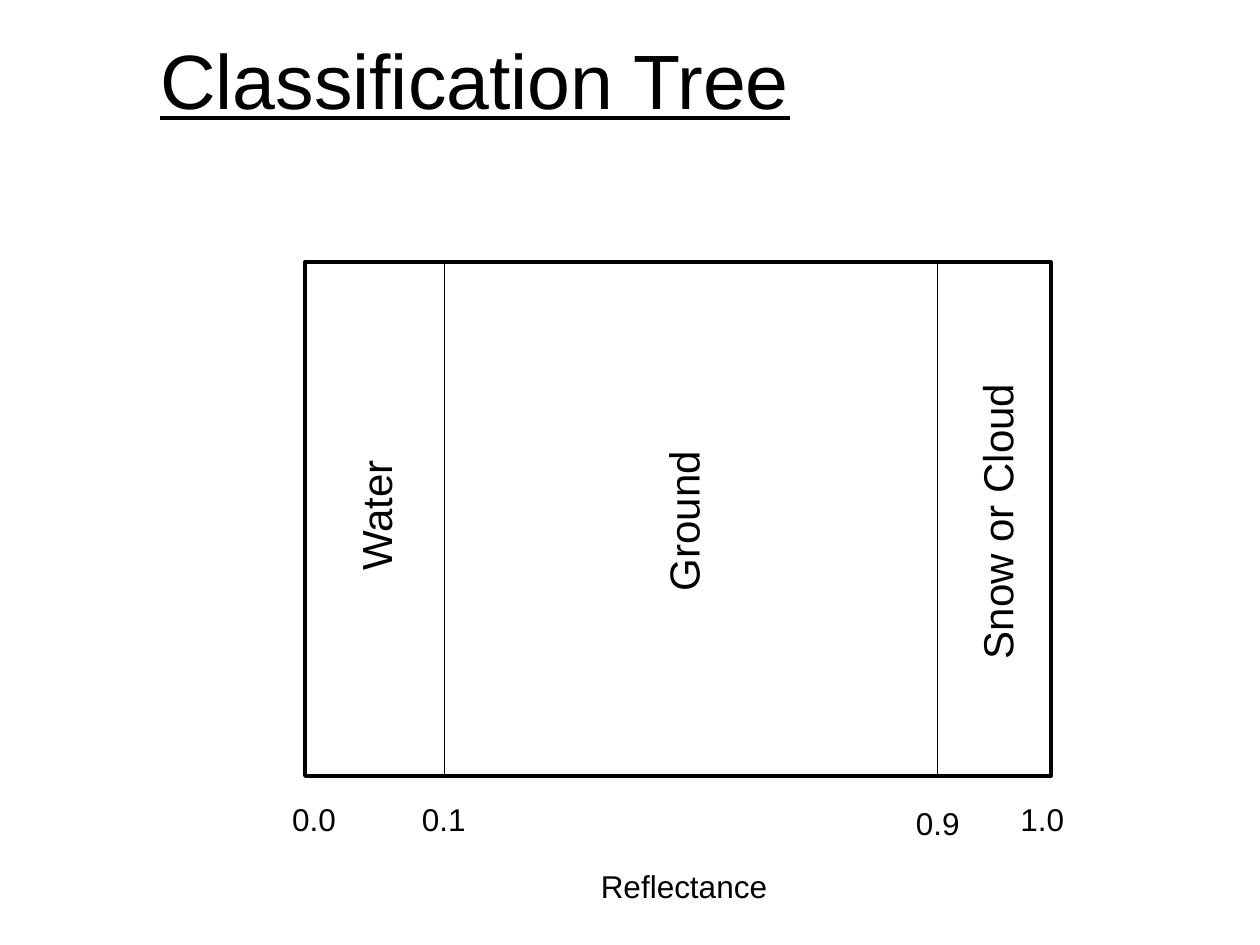
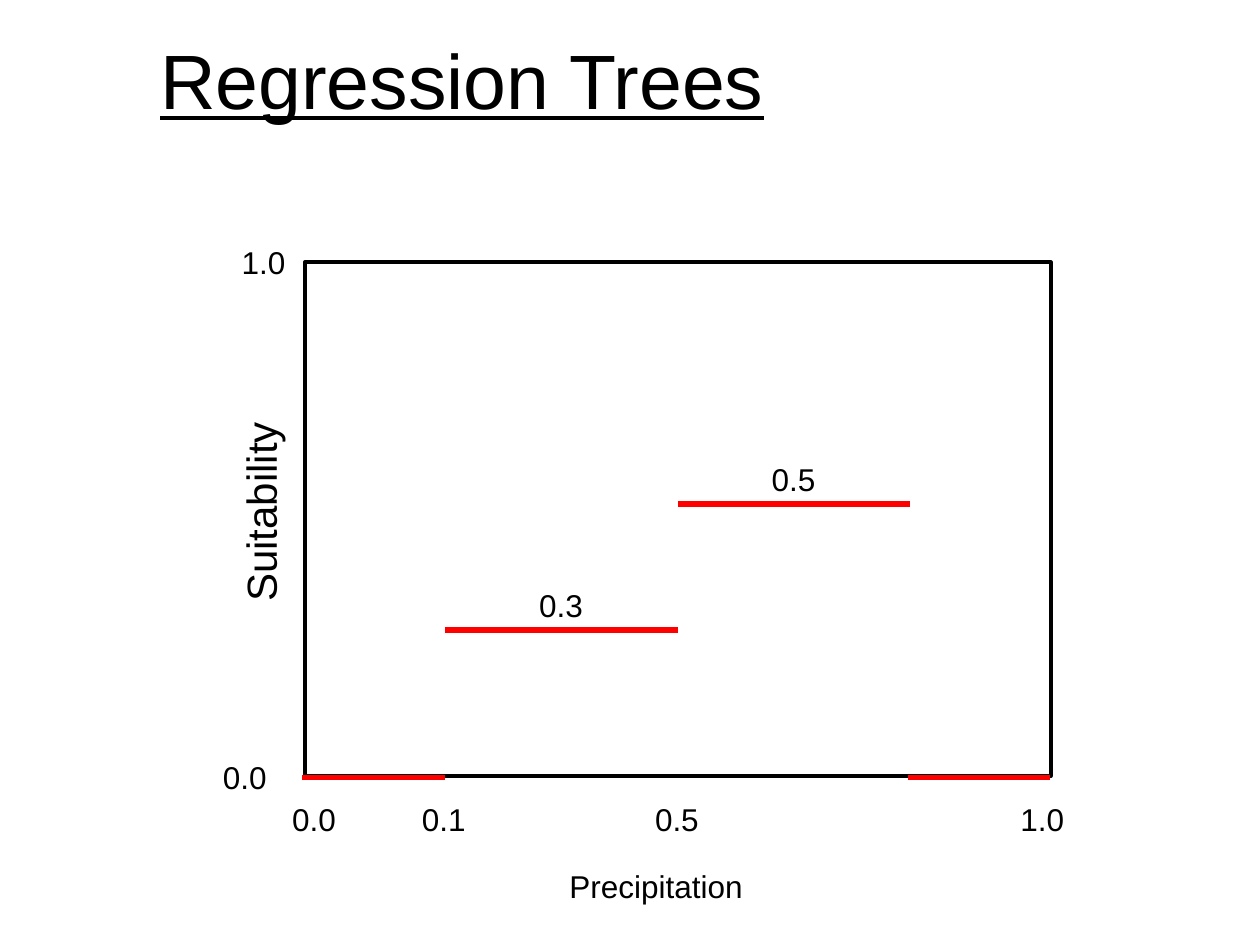
from lxml import etree
from pptx import Presentation
from pptx import util as u
from pptx.dml.color import RGBColor
from pptx.enum import shapes, text
from pptx.oxml import ns

BLACK = RGBColor(0, 0, 0)
WHITE = RGBColor(255, 255, 255)
RED = RGBColor(255, 0, 0)
FONT = "Arial"
LEFT, TOP, WIDTH, HEIGHT = 2.42, 2.08, 5.92, 4.08
BOTTOM = 6.17
TICK_Y, TICK_WIDTH, AXIS_TITLE_Y = 6.3, 0.55, 6.83


def add_label(slide, words, x, y, width, size=18, rotation=0, wrap=False):
    height = 0.4 if size == 18 else 0.51
    label = slide.shapes.add_textbox(u.Inches(x), u.Inches(y), u.Inches(width), u.Inches(height))
    label.rotation = rotation
    frame = label.text_frame
    frame.word_wrap = wrap
    frame.auto_size = text.MSO_AUTO_SIZE.SHAPE_TO_FIT_TEXT
    run = frame.paragraphs[0].add_run()
    run.text = words
    run.font.name, run.font.size = FONT, u.Pt(size)
    run.font.color.rgb = BLACK


def add_line(slide, x1, y1, x2, y2, color, weight):
    line = slide.shapes.add_connector(
        shapes.MSO_CONNECTOR.STRAIGHT, u.Inches(x1), u.Inches(y1), u.Inches(x2), u.Inches(y2))
    line.line.color.rgb = color
    line.line.width = u.Pt(weight)
    etree.SubElement(line._element.spPr, ns.qn("a:effectLst"))


prs = Presentation()
prs.slide_width, prs.slide_height = u.Inches(10), u.Inches(7.5)

# Both slides: title, plot frame and the ticks they have in common
plots = []
for heading in ("Classification Tree", "Regression Trees"):
    slide = prs.slides.add_slide(prs.slide_layouts[5])
    title = slide.shapes.title
    title.left, title.top = u.Inches(1.17), u.Inches(0)
    title.width, title.height = u.Inches(8.67), u.Inches(1.25)
    title.text_frame.vertical_anchor = text.MSO_ANCHOR.MIDDLE
    paragraph = title.text_frame.paragraphs[0]
    paragraph.alignment = text.PP_ALIGN.LEFT
    run = paragraph.add_run()
    run.text = heading
    run.font.name, run.font.size = FONT, u.Pt(44)
    run.font.underline = True
    run.font.color.rgb = BLACK

    plot_area = slide.shapes.add_shape(
        shapes.MSO_SHAPE.RECTANGLE, u.Inches(LEFT), u.Inches(TOP), u.Inches(WIDTH), u.Inches(HEIGHT))
    plot_area.shadow.inherit = False
    plot_area.fill.solid()
    plot_area.fill.fore_color.rgb = WHITE
    plot_area.line.color.rgb = BLACK
    plot_area.line.width = u.Pt(2)

    for tick, x in (("0.0", 2.22), ("0.1", 3.25), ("1.0", 8)):
        add_label(slide, tick, x, TICK_Y, TICK_WIDTH)
    plots.append(slide)

classification, regression = plots

# Classification: reflectance split into three classes
add_label(classification, "0.9", 7.17, 6.33, TICK_WIDTH)
for split_x in (3.53, 7.44):
    add_line(classification, split_x, BOTTOM, split_x, TOP, BLACK, 0.75)
for name, x, y, width in (
    ("Water", 2.44, 3.83, 1.09),
    ("Ground", 4.76, 3.87, 1.33),
    ("Snow or Cloud", 6.71, 3.87, 2.41),
):
    add_label(classification, name, x, y, width, size=24, rotation=270)
add_label(classification, "Reflectance", 4.67, AXIS_TITLE_Y, 1.53)

# Regression: one constant suitability per precipitation range
for tick, x, y in (("0.5", 5.1, TICK_Y), ("0.0", 1.67, 5.97), ("1.0", 1.82, 1.88)):
    add_label(regression, tick, x, y, TICK_WIDTH)
for start, end, level, value in (
    (2.4, 3.53, BOTTOM, None),
    (3.53, 5.38, 5, "0.3"),
    (5.38, 7.22, 4, "0.5"),
    (7.21, 8.33, BOTTOM, None),
):
    add_line(regression, start, level, end, level, RED, 3)
    if value:
        add_label(regression, value, (start + end - TICK_WIDTH) / 2, level - 0.4, TICK_WIDTH)
add_label(regression, "Suitability", 1.25, 3.8, 1.64, size=24, rotation=270)
add_label(regression, "Precipitation", 4.42, AXIS_TITLE_Y, 2.25, wrap=True)

prs.save("out.pptx")
